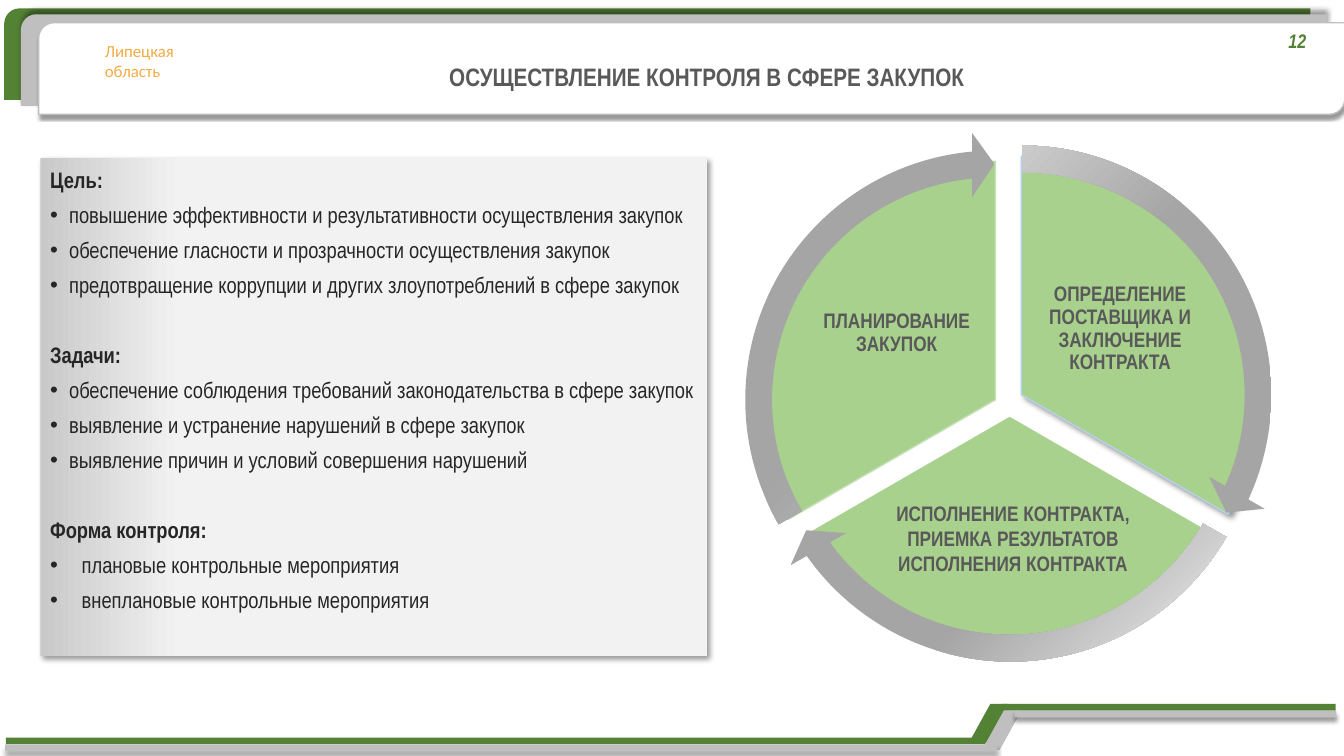
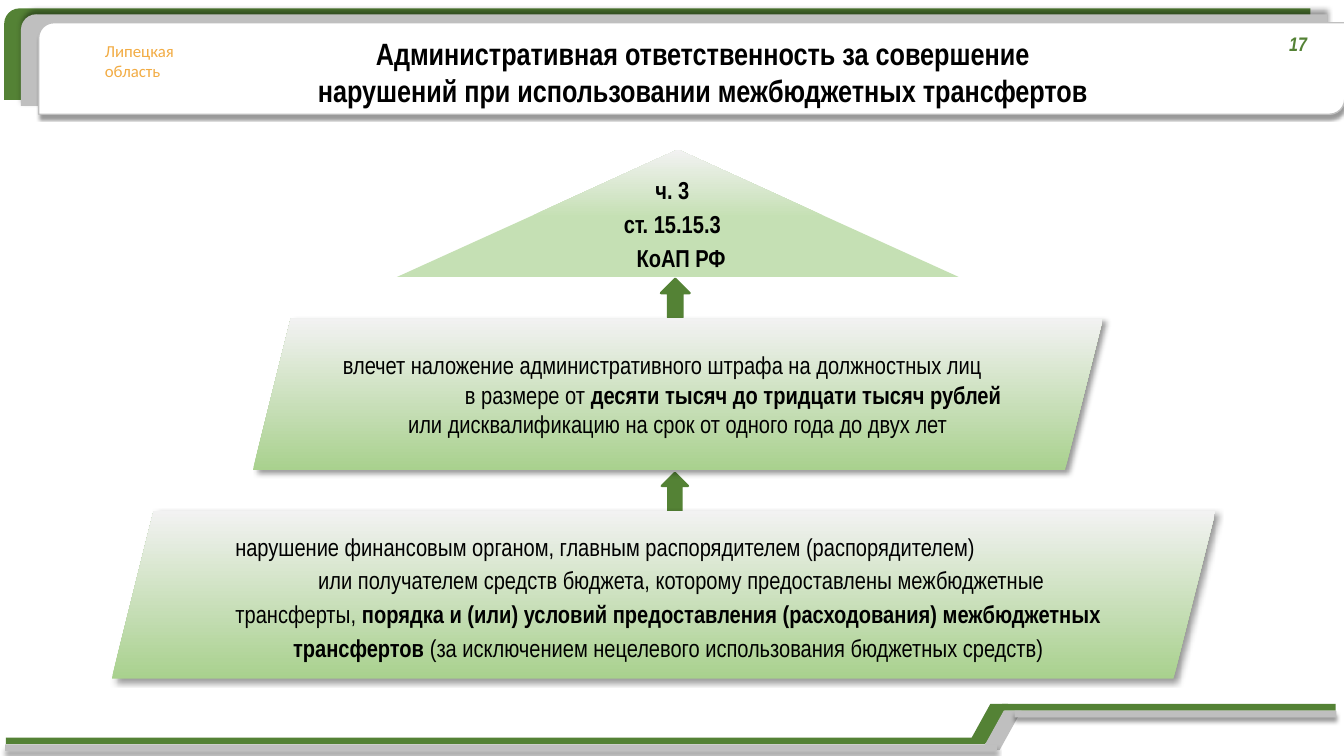
"""Two slides on procurement control and liability for budget transfer violations."""
from lxml import etree
from pptx import Presentation
from pptx import util as u
from pptx.dml import color
from pptx.enum import shapes, text
from pptx.oxml import ns

COLS, ROWS = 160, 90
CELL = u.Inches(1) / 12
SHAPE, ALIGN, ANCHOR = shapes.MSO_SHAPE, text.PP_ALIGN, text.MSO_ANCHOR
GREEN, GREY, WHITE, BLACK = "548235", "BFBFBF", "FFFFFF", "000000"
LEAF, PALE, MIST, DARK, INK = "A9D18E", "C5E0B4", "F2F2F2", "595959", "262626"
AMBER = "F2AC44"
NARROW = "Arial Narrow"
TOP_LEFT = dict(l="0", t="0", r="100000", b="100000")
BOTTOM_RIGHT = dict(l="100000", t="100000", r="0", b="0")
CORNER_SHADOW = (4, 3, 45)


def cells(n):
    """Convert grid cells to a length."""
    return u.Emu(round(n * CELL))


def rgb(value):
    """Turn a hex string into a colour."""
    return color.RGBColor.from_string(value)


def add(parent, tag, **attrs):
    """Append a drawing element to its parent."""
    return etree.SubElement(parent, ns.qn("a:" + tag), attrs)


def gradient(sp, stops, angle=None, focus=None):
    """Fill a shape with a linear gradient, or a round one when a focus is given."""
    sp.fill.gradient()
    grad = sp.element.spPr.find(ns.qn("a:gradFill"))
    for child in list(grad):
        grad.remove(child)
    stop_list = add(grad, "gsLst")
    for share, value in stops:
        stop = add(stop_list, "gs", pos=str(share * 1000))
        add(stop, "srgbClr", val=value)
    if focus:
        add(add(grad, "path", path="circle"), "fillToRect", **focus)
    else:
        add(grad, "lin", ang=str(angle * 60000), scaled="0")


def style(sp, fill=None, line=None, width=1, shadow=None):
    """Set the fill, outline and shadow of a shape."""
    sp.shadow.inherit = False
    if fill:
        sp.fill.solid()
        sp.fill.fore_color.rgb = rgb(fill)
    if line:
        sp.line.color.rgb = rgb(line)
        sp.line.width = u.Pt(width)
    else:
        sp.line.fill.background()
    if shadow:
        blur, distance, angle = shadow
        effects = sp.element.spPr.find(ns.qn("a:effectLst"))
        outer = add(effects, "outerShdw", blurRad=str(u.Pt(blur)), dist=str(u.Pt(distance)),
                    dir=str(angle * 60000), algn="tl", rotWithShape="0")
        add(add(outer, "srgbClr", val=BLACK), "alpha", val="40000")


def shape(s, kind, box, adj=(), **look):
    """Add a preset shape on the grid."""
    sp = s.shapes.add_shape(kind, *map(cells, box))
    for i, value in enumerate(adj):
        sp.adjustments[i] = value
    style(sp, **look)
    return sp


def frame_text(sp, anchor=ANCHOR.TOP, insets=(1.2, 0.6, 1.2, 0.6), wrap=True):
    """Prepare the text frame of a shape."""
    tf = sp.text_frame
    tf.word_wrap, tf.vertical_anchor = wrap, anchor
    tf.margin_left, tf.margin_top, tf.margin_right, tf.margin_bottom = map(cells, insets)
    return tf


def textbox(s, box, **frame):
    """Add a text box and return its text frame."""
    return frame_text(s.shapes.add_textbox(*map(cells, box)), **frame)


def para(tf, runs, size, ink=BLACK, font=NARROW, align=ALIGN.LEFT, spacing=None,
         before=0, left=0, right=0, bullet=False, italic=False):
    """Add a paragraph built from (text, bold) runs."""
    p = tf.paragraphs[0]
    if p.runs:
        p = tf.add_paragraph()
    p.alignment, p.line_spacing, p.space_before = align, spacing, u.Pt(before)
    pr = p._p.get_or_add_pPr()
    pr.set("marL", str(cells(left)))
    pr.set("marR", str(cells(right)))
    if bullet:
        pr.set("indent", str(-cells(left)))
        add(pr, "buFont", typeface="Arial")
        add(pr, "buChar", char="•")
    for words, bold in runs:
        r = p.add_run()
        r.text = words
        r.font.name, r.font.size = font, u.Pt(size)
        r.font.bold, r.font.italic = bold, italic
        r.font.color.rgb = rgb(ink)


def slant(s, x, y, fill):
    """Draw the slanted piece that joins two footer bars."""
    points = [(0, 4.7), (2.6, 0), (4.7, 0), (2.1, 4.7)]
    first, *rest = [(cells(x + dx), cells(y + dy)) for dx, dy in points]
    builder = s.shapes.build_freeform(*first, scale=1.0)
    builder.add_line_segments(rest)
    style(builder.convert_to_shape(), fill)


def base_slide(prs, number, number_at):
    """Add a blank slide with header plates, region label, footer and number."""
    s = prs.slides.add_slide(prs.slide_layouts[6])
    for x, y, fill, line, shadow in [(0.5, 1, GREEN, None, None),
                                     (2.5, 1.7, GREY, None, (4, 3, 270)),
                                     (4.6, 2.7, WHITE, GREY, (2, 3, 90))]:
        shape(s, SHAPE.ROUND_2_DIAG_RECTANGLE, (x, y, 155.5, 10.9),
              fill=fill, line=line, shadow=shadow)
    tf = textbox(s, (11.3, 4.3, 10.9, 6))
    for word in ("Липецкая", "область"):
        para(tf, [(word, False)], 12, AMBER, "Calibri")
    footer = [(GREEN, None, (115.3, 83.8), (0.7, 87.8, 116.6), (119.3, 83.8, 39.7)),
              (GREY, (3, 3, 90), (116.9, 84.6), (0.6, 88.6, 118.1), (120.8, 84.6, 38.3))]
    for fill, shadow, joint, *bars in footer:
        slant(s, *joint, fill)
        for bar in bars:
            shape(s, SHAPE.RECTANGLE, (*bar, 0.8), fill=fill, shadow=shadow)
    tf = textbox(s, (*number_at, 4.6, 4.1), wrap=False)
    para(tf, [(number, True)], 14, GREEN, italic=True)
    return s


def title(s, box, lines, size, ink, **frame):
    """Write the centred slide title."""
    tf = textbox(s, box, **frame)
    for line in lines:
        para(tf, [(line, True)], size, ink, align=ALIGN.CENTER)


def goals_panel(s):
    """Draw the panel of goals, tasks and forms of control."""
    sections = [
        ("Цель:", 2.25, ["повышение эффективности и результативности осуществления закупок",
                         "обеспечение гласности и прозрачности осуществления закупок",
                         "предотвращение коррупции и других злоупотреблений в сфере закупок"]),
        ("Задачи:", 2.25, ["обеспечение соблюдения требований законодательства в сфере закупок",
                           "выявление и устранение нарушений в сфере закупок",
                           "выявление причин и условий совершения нарушений"]),
        ("Форма контроля:", 3.75, ["плановые контрольные мероприятия",
                                   "внеплановые контрольные мероприятия"])]
    pitch = u.Pt(25)
    sp = shape(s, SHAPE.RECTANGLE, (4.8, 18.8, 79.4, 59.3), shadow=CORNER_SHADOW)
    gradient(sp, [(0, "C9C9C9"), (21, MIST)], angle=0)
    tf = frame_text(sp, insets=(1.2, 0, 1.2, 0))
    for i, (heading, indent, items) in enumerate(sections):
        para(tf, [(heading, True)], 16, INK, spacing=pitch, before=25 if i else 0)
        for item in items:
            para(tf, [(item, False)], 16, INK, spacing=pitch, left=indent, bullet=True)


def cycle(s):
    """Draw the three-sector cycle with its labels and arrows."""
    sectors = [
        (270, (93.2, 18.6), "B5D2EC", CORNER_SHADOW, (123.2, 30.7, 20.3, 16.9), 0.9,
         "ОПРЕДЕЛЕНИЕ ПОСТАВЩИКА И ЗАКЛЮЧЕНИЕ КОНТРАКТА"),
        (30, (91.8, 21.1), WHITE, None, (105.4, 56.6, 30.4, 14.9), 1.0,
         "ИСПОЛНЕНИЕ КОНТРАКТА, ПРИЕМКА РЕЗУЛЬТАТОВ ИСПОЛНЕНИЯ КОНТРАКТА"),
        (150, (90.1, 19.2), PALE, None, (96.6, 31.2, 20.3, 16.9), 0.9,
         "ПЛАНИРОВАНИЕ ЗАКУПОК")]
    arrows = [(270, (89.8, 15.1), 47, TOP_LEFT),
              (30, (88.4, 17.2), 35, BOTTOM_RIGHT),
              (150, (86.5, 15.7), 62, BOTTOM_RIGHT)]
    turn = 0.6
    for start, corner, line, shadow, label_box, spacing, label in sectors:
        shape(s, SHAPE.PIE, (*corner, 56.8, 56.8),
              (start * turn, (start + 120) % 360 * turn), fill=LEAF, line=line, shadow=shadow)
        tf = textbox(s, label_box, anchor=ANCHOR.MIDDLE, insets=[0.24] * 4)
        para(tf, [(label, True)], 15, DARK, align=ALIGN.CENTER, spacing=spacing)
    for start, corner, middle, focus in arrows:
        end = (start + 114.54) % 360
        sp = shape(s, SHAPE.CIRCULAR_ARROW, (*corner, 63.8, 63.8),
                   (0.05, 3.28, end * turn, start * turn, 0.06))
        gradient(sp, [(0, WHITE), (middle, "A6A6A6"), (100, "A5A5A5")], focus=focus)


def step(s, kind, box, stops, lines, spacing=None, adj=(), shadow=None, **frame):
    """Draw one level of the liability scheme; lines are (left, right, runs)."""
    sp = shape(s, kind, box, adj, shadow=shadow)
    gradient(sp, stops, angle=270)
    tf = frame_text(sp, **frame)
    for left, right, runs in lines:
        para(tf, runs, 17.5, align=ALIGN.CENTER, spacing=spacing, left=left, right=right)


def liability(s):
    """Draw the violation, the penalty and the article, linked upwards."""
    block = dict(stops=[(0, LEAF), (100, MIST)], shadow=CORNER_SHADOW,
                 anchor=ANCHOR.MIDDLE, insets=(0, 0.5, 0, 0.5))
    for box in [(78.7, 33.2, 3.4, 4.6), (78.8, 56.3, 3.1, 4.6)]:
        shape(s, SHAPE.UP_ARROW, box, fill=GREEN, line=GREEN, width=1.75)
    step(s, SHAPE.PARALLELOGRAM, (30.1, 37.9, 101.2, 18.1), lines=[
        (0, 3.6, [("влечет наложение административного штрафа на должностных лиц", False)]),
        (13.2, 0, [("в размере от ", False), ("десяти тысяч до тридцати тысяч рублей", True)]),
        (0, 0, [("или дисквалификацию на срок от одного года до двух лет", False)])], **block)
    step(s, SHAPE.PARALLELOGRAM, (13.3, 60.8, 131.4, 20), spacing=1.15, lines=[
        (0, 13.8, [("нарушение финансовым органом, главным распорядителем (распорядителем)",
                    False)]),
        (4.3, 0, [("или получателем средств бюджета, которому предоставлены межбюджетные",
                   False)]),
        (1.2, 0, [("трансферты, ", False),
                  ("порядка и (или) условий предоставления (расходования) межбюджетных",
                   True)]),
        (1.2, 0, [("трансфертов", True),
                  (" (за исключением нецелевого использования бюджетных средств)", False)])],
         **block)
    step(s, SHAPE.ISOSCELES_TRIANGLE, (47.2, 17.8, 67, 15.2), [(47, PALE), (100, MIST)], [
        (0, 1.3, [("ч. 3", True)]),
        (0, 1.3, [("ст. 15.15.3", True)]),
        (0.8, 0, [("КоАП РФ", True)])], spacing=1.15, adj=(0.5,), anchor=ANCHOR.BOTTOM)


def main():
    """Build both slides and save the file."""
    prs = Presentation()
    prs.slide_width, prs.slide_height = cells(COLS), cells(ROWS)
    s = base_slide(prs, "12", (152.2, 2.9))
    title(s, (22.9, 5.6, 122.5, 5.3), ["ОСУЩЕСТВЛЕНИЕ КОНТРОЛЯ В СФЕРЕ ЗАКУПОК"], 18, DARK,
          anchor=ANCHOR.BOTTOM, insets=[0] * 4)
    cycle(s)
    goals_panel(s)
    s = base_slide(prs, "17", (152.3, 3.2))
    title(s, (25.1, 3.6, 117.1, 10), ["Административная ответственность за совершение",
                                      "нарушений при использовании межбюджетных трансфертов"],
          22, BLACK)
    liability(s)
    prs.save("out.pptx")


if __name__ == "__main__":
    main()
